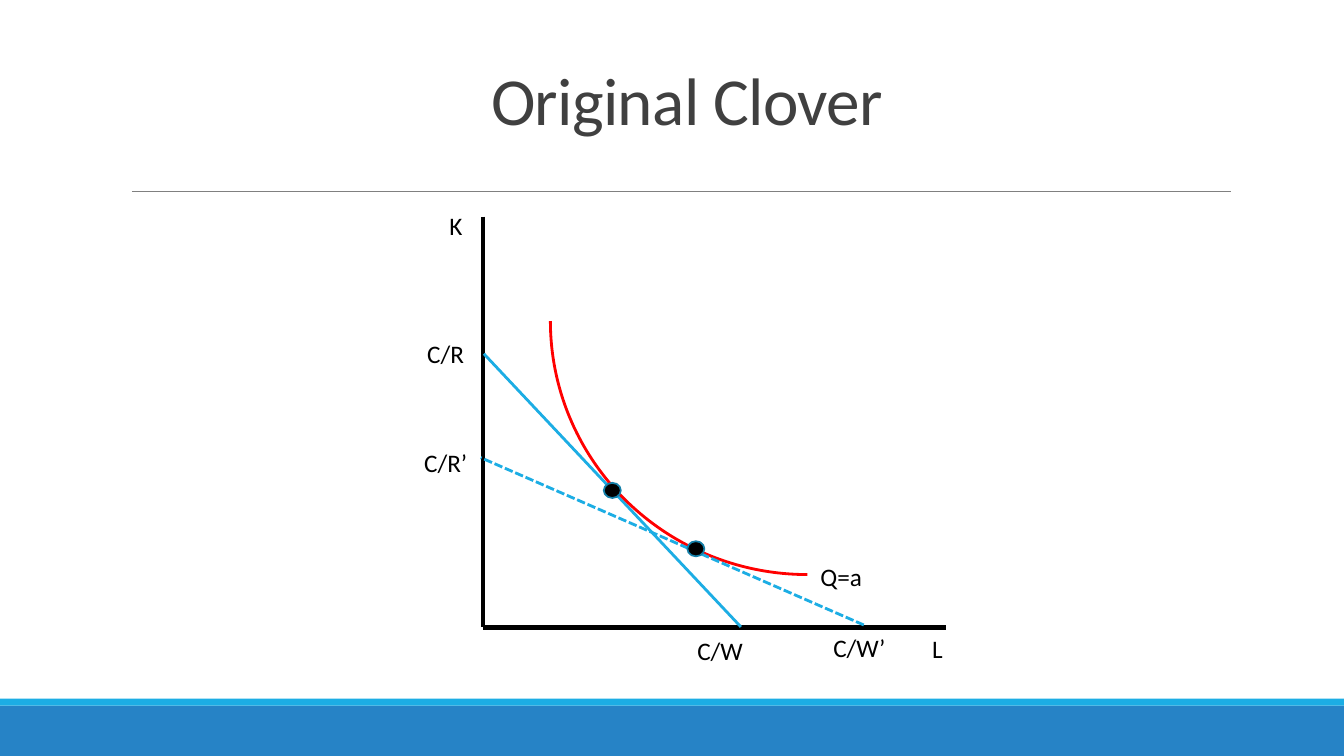
from lxml.etree import SubElement
from pptx import Presentation
from pptx.dml.color import RGBColor
from pptx.enum.dml import MSO_LINE
from pptx.enum.shapes import MSO_CONNECTOR, MSO_SHAPE
from pptx.enum.text import MSO_ANCHOR, PP_ALIGN
from pptx.oxml.ns import qn
from pptx.util import Pt

COLORS = {
    "footer": "2683C6",
    "accent": "1CADE4",
    "rule": "808080",
    "title": "404040",
    "black": "000000",
    "isoquant": "FF0000",
    "dot_edge": "1580A9",
}
FONT = "Calibri"
SLIDE_WIDTH, SLIDE_HEIGHT = 960, 540
ORIGIN_X, ORIGIN_Y = 344.9, 448.2
DOT_WIDTH, DOT_HEIGHT = 12.2, 10.8


def color(name):
    return RGBColor.from_string(COLORS[name])


def write_text(text_frame, text, size=18, color_name="black", align=PP_ALIGN.LEFT,
               anchor=MSO_ANCHOR.TOP, line_spacing=1.0, tracking=0):
    """Fill a text frame with one formatted run; tracking is in points."""
    text_frame.word_wrap = True
    text_frame.vertical_anchor = anchor
    paragraph = text_frame.paragraphs[0]
    paragraph.alignment = align
    paragraph.line_spacing = line_spacing
    run = paragraph.add_run()
    run.text = text
    run.font.name = FONT
    run.font.size = Pt(size)
    run.font.color.rgb = color(color_name)
    if tracking:
        run.font._element.set("spc", str(round(tracking * 100)))


def add_title(slide, text):
    title = slide.shapes.title
    title.left, title.top, title.width, title.height = Pt(94.3), Pt(32.4), Pt(792.7), Pt(85)
    write_text(title.text_frame, text, size=48, color_name="title", align=PP_ALIGN.CENTER,
               anchor=MSO_ANCHOR.MIDDLE, line_spacing=0.85, tracking=-0.5)


def add_label(slide, text, left, top, width, height=28.8):
    box = slide.shapes.add_textbox(Pt(left), Pt(top), Pt(width), Pt(height))
    write_text(box.text_frame, text)


def add_line(slide, start, end, color_name, width, dash=None):
    line = slide.shapes.add_connector(MSO_CONNECTOR.STRAIGHT, *map(Pt, (*start, *end)))
    line.line.color.rgb = color(color_name)
    line.line.width = Pt(width)
    if dash:
        line.line.dash_style = dash
    SubElement(line._element.spPr, qn("a:effectLst"))


def add_figure(slide, kind, left, top, width, height, fill=None, edge=None, edge_width=1):
    shape = slide.shapes.add_shape(kind, Pt(left), Pt(top), Pt(width), Pt(height))
    shape.shadow.inherit = False
    if fill:
        shape.fill.solid()
        shape.fill.fore_color.rgb = color(fill)
    else:
        shape.fill.background()
    if edge:
        shape.line.color.rgb = color(edge)
        shape.line.width = Pt(edge_width)
    else:
        shape.line.fill.background()
    return shape


def add_frame(slide):
    """Draw the footer bands and the rule under the title."""
    add_figure(slide, MSO_SHAPE.RECTANGLE, 0, 504, SLIDE_WIDTH, 36, fill="footer")
    add_figure(slide, MSO_SHAPE.RECTANGLE, 0, 499, SLIDE_WIDTH, 5, fill="accent")
    add_line(slide, (94.3, 136.8), (879, 136.8), "rule", 0.5)


def add_diagram(slide):
    add_line(slide, (ORIGIN_X, 154.8), (ORIGIN_X, ORIGIN_Y), "black", 3)
    add_line(slide, (675.4, ORIGIN_Y), (ORIGIN_X, ORIGIN_Y), "black", 3)
    add_line(slide, (345.6, 252.7), (529.2, 447.8), "accent", 2)
    isoquant = add_figure(slide, MSO_SHAPE.ARC, 393.1, 48.2, 367.2, 362.2,
                          edge="isoquant", edge_width=2)
    isoquant.rotation = 180
    add_line(slide, (617, 446.4), (343.4, 326.9), "accent", 2, dash=MSO_LINE.SQUARE_DOT)

    for left, top in ((431.3, 344.9), (491, 386.6)):
        add_figure(slide, MSO_SHAPE.OVAL, left, top, DOT_WIDTH, DOT_HEIGHT,
                   fill="black", edge="dot_edge", edge_width=1.25)

    for text, left, top, width in (
        ("K", 313.9, 146.9, 34.6),
        ("L", 658.8, 448.6, 33.1),
        ("C/R", 298.1, 238.3, 66.2),
        ("C/R’", 295.9, 316.1, 52.6),
        ("C/W", 491, 450, 69.8),
        ("C/W’", 588.2, 447.8, 67.7),
        ("Q=a", 578.9, 397.4, 85.7),
    ):
        add_label(slide, text, left, top, width)


def main():
    presentation = Presentation()
    presentation.slide_width, presentation.slide_height = Pt(SLIDE_WIDTH), Pt(SLIDE_HEIGHT)
    slide = presentation.slides.add_slide(presentation.slide_layouts[5])
    add_frame(slide)
    add_title(slide, "Original Clover")
    add_diagram(slide)
    presentation.save("out.pptx")


if __name__ == "__main__":
    main()
